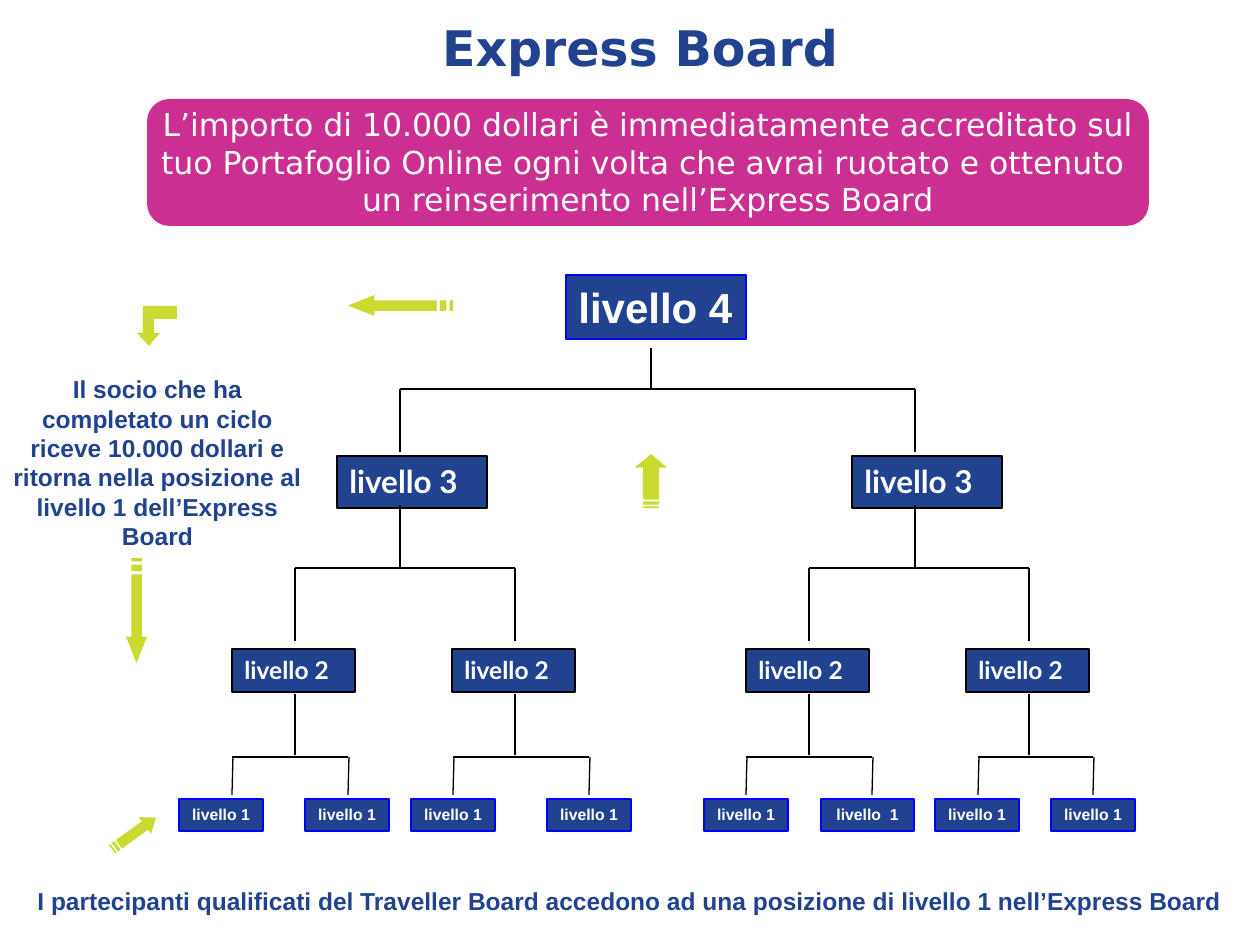
import lxml.etree
import pptx
import pptx.dml.color
import pptx.enum.shapes
import pptx.enum.text
import pptx.oxml.ns
import pptx.util

SCALE = 914400 / 126
SHAPES = pptx.enum.shapes.MSO_SHAPE
ALIGN = pptx.enum.text.PP_ALIGN
ANCHOR = pptx.enum.text.MSO_ANCHOR
FIT = pptx.enum.text.MSO_AUTO_SIZE.SHAPE_TO_FIT_TEXT

BLUE, PINK, LIME = "21428E", "CB2F92", "CADA30"
WHITE, BLACK, BRIGHT_BLUE = "FFFFFF", "000000", "0000FF"

TITLE = "Express Board"
BANNER = [
    "L’importo di 10.000 dollari è immediatamente accreditato sul "
    "tuo Portafoglio Online ogni volta che avrai ruotato e ottenuto ",
    "un reinserimento nell’Express Board",
]
CYCLE_NOTE = ("Il socio che ha completato un ciclo riceve 10.000 dollari e "
              "ritorna nella posizione al livello 1 dell’Express Board")
FOOTER = ("I partecipanti qualificati del Traveller Board accedono ad una "
          "posizione di livello 1 nell’Express Board")

# Each level: text, box lefts, box (top, width, height), text format, outline, wrap
STEMS_3 = [400, 915]
STEMS_2 = [295, 515, 809, 1029]
STEM_OFFSET = 63
LEVELS = [
    ("livello 4", [566], (275, 180, 64), {"name": "Arial", "size": 24}, BRIGHT_BLUE, False),
    ("livello 3", [x - STEM_OFFSET for x in STEMS_3], (456, 150, 52),
     {"name": "Lato", "size": 18}, BLACK, False),
    ("livello 2", [x - STEM_OFFSET for x in STEMS_2], (649, 123, 43),
     {"name": "Lato", "size": 14}, BLACK, False),
    ("livello 1", [179, 305, 411, 547, 704, 935, 1051], (799, 84, 32),
     {"name": "Arial", "size": 9}, BRIGHT_BLUE, True),
    ("livello  1", [821], (799, 93, 32), {"name": "Arial", "size": 9}, BRIGHT_BLUE, True),
]

# Each row of forks: trunk top, trunk bottom, bar, drop bottom, slant, {trunk x: drop xs}
FORKS = [
    (348, 389, 389, 452, 0, {651: STEMS_3}),
    (505, 568, 568, 641, 0, dict(zip(STEMS_3, [STEMS_2[:2], STEMS_2[2:]]))),
    (694, 755, 757, 795, 1,
     dict(zip(STEMS_2, [(232, 348), (453, 589), (746, 872), (978, 1093)]))),
]

# Striped arrows: left, top, length, thickness, rotation
STRIPED_ARROWS = [
    (624, 465, 54, 32, 270),
    (348, 295, 105, 21, 180),
    (84, 600, 105, 21, 90),
    (107, 823, 54, 21, 324.1),
]
BENT_ARROW = [(149, 346), (160, 333), (154, 333), (154, 319), (177, 319),
              (177, 306), (143, 306), (143, 333), (137, 333)]


def px(*lengths):
    return [pptx.util.Emu(round(length * SCALE)) for length in lengths]


def color(hex_string):
    return pptx.dml.color.RGBColor.from_string(hex_string)


def write(shape, paragraphs, font, align=ALIGN.CENTER, anchor=ANCHOR.TOP, wrap=True):
    frame = shape.text_frame
    frame.text = "\n".join(paragraphs)
    for name, value in {"word_wrap": wrap, "auto_size": FIT, "vertical_anchor": anchor}.items():
        setattr(frame, name, value)
    values = {"bold": True, **font, "size": pptx.util.Pt(font["size"])}
    tint = values.pop("color")
    for paragraph in frame.paragraphs:
        paragraph.alignment = align
        for run in paragraph.runs:
            for name, value in values.items():
                setattr(run.font, name, value)
            run.font.color.rgb = color(tint)


def paint(shape, fill, line=None, width=0.75):
    shape.shadow.inherit = False
    shape.fill.solid()
    shape.fill.fore_color.rgb = color(fill)
    if line:
        shape.line.color.rgb = color(line)
        shape.line.width = pptx.util.Pt(width)
    else:
        shape.line.fill.background()


def add_line(slide, *ends):
    line = slide.shapes.add_connector(pptx.enum.shapes.MSO_CONNECTOR.STRAIGHT, *px(*ends))
    line.line.color.rgb = color(BLACK)
    line.line.width = pptx.util.Pt(0.75)
    properties = line._element.spPr
    lxml.etree.SubElement(properties, pptx.oxml.ns.qn("a:effectLst"))


def add_fork(slide, trunk, drops, trunk_top, trunk_bottom, bar, drop_bottom, slant):
    add_line(slide, trunk, trunk_top, trunk, trunk_bottom)
    add_line(slide, drops[0], bar, drops[1], bar)
    for x in drops:
        add_line(slide, x + slant, bar, x, drop_bottom)


def add_outline(slide, contours, rotation=0):
    first, *others = [[px(*point) for point in contour] for contour in contours]
    builder = slide.shapes.build_freeform(*first[0])
    builder.add_line_segments(first[1:])
    for contour in others:
        builder.move_to(*contour[0])
        builder.add_line_segments(contour[1:])
    shape = builder.convert_to_shape()
    shape.rotation = rotation
    paint(shape, LIME)


def striped_arrow(left, top, length, thickness):
    """Contours of a right arrow with two stripes behind its shaft."""
    def x(part):
        return left + length * part / 32

    high, middle, low = (top + thickness * part for part in (0.25, 0.5, 0.75))
    head = [(x(24), top), (x(32), middle), (x(24), top + thickness)]
    shaft = [(x(5), high), (x(24), high), *head, (x(24), low), (x(5), low)]
    stripes = [[(x(a), high), (x(b), high), (x(b), low), (x(a), low)]
               for a, b in ((0, 1), (2, 4))]
    return [shaft, *stripes]


def add_text(slide, box, paragraphs, font, anchor=ANCHOR.TOP):
    write(slide.shapes.add_textbox(*px(*box)), paragraphs, font, anchor=anchor)


def main():
    presentation = pptx.Presentation()
    presentation.slide_width, presentation.slide_height = px(1260, 945)
    slide = presentation.slides.add_slide(presentation.slide_layouts[5])

    title = slide.shapes.title
    title.left, title.top, title.width, title.height = px(10, 11, 1260, 72)
    write(title, [TITLE], {"name": "DejaVu Sans", "size": 28, "color": BLUE})

    banner = slide.shapes.add_shape(SHAPES.FLOWCHART_ALTERNATE_PROCESS, *px(149, 101, 998, 123))
    paint(banner, PINK, PINK, 2.25)
    add_text(slide, (147, 98, 1002, 127), BANNER,
             {"name": "DejaVu Sans", "size": 18, "color": WHITE, "bold": False}, ANCHOR.MIDDLE)

    note_font = {"name": "Arial", "size": 14, "color": BLUE}
    add_text(slide, (0, 880, 1260, 42), [FOOTER], note_font)
    add_text(slide, (0, 368, 315, 189), [CYCLE_NOTE], note_font)

    for text, lefts, (top, width, height), font, outline, wrap in LEVELS:
        for left in lefts:
            box = slide.shapes.add_shape(SHAPES.RECTANGLE, *px(left, top, width, height))
            paint(box, BLUE, outline)
            write(box, [text], {**font, "color": WHITE},
                  ALIGN.CENTER if wrap else ALIGN.LEFT, wrap=wrap)

    for *measures, forks in FORKS:
        for trunk, drops in forks.items():
            add_fork(slide, trunk, drops, *measures)

    for *box, rotation in STRIPED_ARROWS:
        add_outline(slide, striped_arrow(*box), rotation)
    add_outline(slide, [BENT_ARROW])

    presentation.save("out.pptx")


if __name__ == "__main__":
    main()
